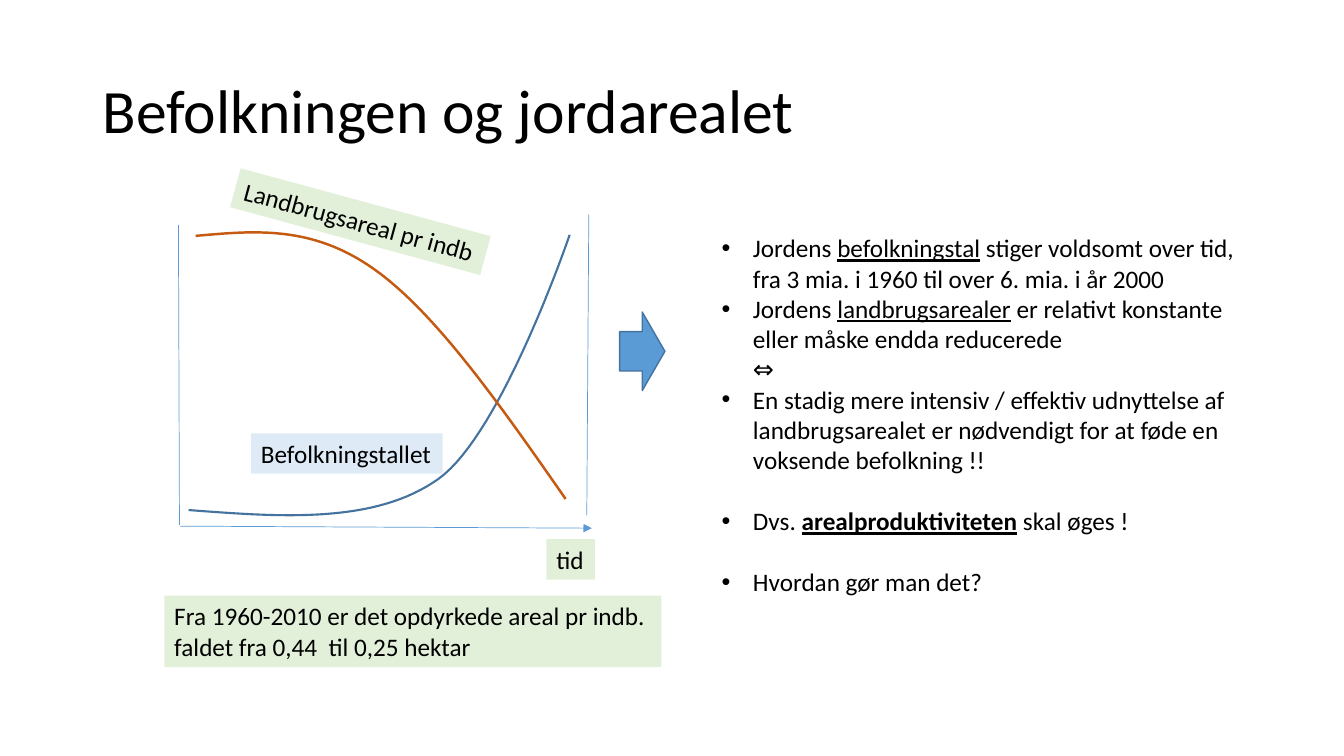
"""Build the slide on population growth and farmland."""
from dataclasses import dataclass
from typing import NamedTuple

from lxml.etree import SubElement
from pptx import Presentation
from pptx.dml.color import RGBColor
from pptx.enum.shapes import MSO_CONNECTOR as Connector, MSO_SHAPE as Preset
from pptx.enum.text import MSO_ANCHOR as Anchor, MSO_AUTO_SIZE as AutoSize
from pptx.oxml.ns import qn
from pptx.slide import Slide
from pptx.util import Inches, Pt

Point = tuple[float, float]


@dataclass(frozen=True)
class Theme:
    font: str = "Calibri"
    title_size: float = 44
    body_size: float = 18
    text: str = "000000"
    blue: str = "5B9BD5"
    dark_blue: str = "43739E"
    orange: str = "C55A11"
    pale_green: str = "E2F0D9"
    pale_blue: str = "DEEBF7"
    white: str = "FFFFFF"
    axis_width: float = 0.5
    arrow_width: float = 1
    bullet_indent: float = 0.31
    bullet_gap: float = 22


THEME = Theme()


class Box(NamedTuple):
    left: float
    top: float
    width: float
    height: float


class Run(NamedTuple):
    text: str
    bold: bool = False
    underline: bool = False


class Item(NamedTuple):
    runs: list[Run]
    gap_after: float = 0


class Label(NamedTuple):
    text: str
    box: Box
    fill: str
    rotation: float = 0


class Curve(NamedTuple):
    points: list[Point]
    color: str
    width: float


class Axis(NamedTuple):
    start: Point
    end: Point
    arrow: bool = False


CURVES = [
    Curve([(1.87, 5.06), (2.79, 5.13), (3.72, 5.2), (4.35, 4.75),
           (4.98, 4.3), (5.65, 2.33), (5.65, 2.33)], THEME.dark_blue, 1.5),
    Curve([(1.94, 2.34), (2.52, 2.29), (3.09, 2.23), (3.71, 2.67),
           (4.32, 3.1), (4.97, 4.03), (5.61, 4.95)], THEME.orange, 1.75),
]
AXES = [
    Axis((1.77, 2.23), (1.78, 5.21)),
    Axis((1.79, 5.22), (5.87, 5.24), arrow=True),
    Axis((5.82, 5.11), (5.84, 2.13)),
]
LABELS = [
    Label("Landbrugsareal pr indb", Box(2.29, 2, 2.57, 0.4), THEME.pale_green, 15.2),
    Label("Befolkningstallet", Box(2.49, 4.3, 1.9, 0.4), THEME.pale_blue),
    Label("tid", Box(5.42, 5.35, 0.48, 0.4), THEME.pale_green),
    Label("Fra 1960-2010 er det opdyrkede areal pr indb.\nfaldet fra 0,44  til 0,25 hektar",
          Box(1.63, 5.91, 4.93, 0.71), THEME.pale_green),
]
ITEMS = [
    Item([Run("Jordens "), Run("befolkningstal", underline=True),
          Run(" stiger voldsomt over tid,\nfra 3 mia. i 1960 til over 6. mia. i år 2000")]),
    Item([Run("Jordens "), Run("landbrugsarealer", underline=True),
          Run(" er relativt konstante\neller måske endda reducerede\n⇔")]),
    Item([Run("En stadig mere intensiv / effektiv udnyttelse af\n"
              "landbrugsarealet er nødvendigt for at føde en\n"
              "voksende befolkning !!")], THEME.bullet_gap),
    Item([Run("Dvs. "), Run("arealproduktiviteten", bold=True, underline=True),
          Run(" skal øges !")], THEME.bullet_gap),
    Item([Run("Hvordan gør man det?")]),
]


def color(value: str) -> RGBColor:
    """Turn a hex value into a colour."""
    return RGBColor.from_string(value)


def write_text(paragraph, text: str, *, size: float = THEME.body_size,
               bold: bool = False, underline: bool = False) -> None:
    """Add formatted text, with a line break at each newline."""
    for index, line in enumerate(text.split("\n")):
        if index:
            paragraph.add_line_break()
        run = paragraph.add_run()
        run.text = line
        font = run.font
        font.name, font.size = THEME.font, Pt(size)
        font.bold, font.underline = bold, underline
        font.color.rgb = color(THEME.text)


def add_text_box(slide: Slide, box: Box, fill: str | None = None, rotation: float = 0,
                 wrap: bool = False):
    """Add an empty text box and return its text frame."""
    shape = slide.shapes.add_textbox(*map(Inches, box))
    shape.rotation = rotation
    if fill:
        shape.fill.solid()
        shape.fill.fore_color.rgb = color(fill)
    frame = shape.text_frame
    frame.word_wrap = wrap
    frame.auto_size = AutoSize.NONE if wrap else AutoSize.SHAPE_TO_FIT_TEXT
    return frame


def add_title(slide: Slide, text: str) -> None:
    """Add the title, centred vertically in its area."""
    frame = add_text_box(slide, Box(0.92, 0.4, 11.5, 1.45), wrap=True)
    frame.vertical_anchor = Anchor.MIDDLE
    frame.paragraphs[0].line_spacing = 0.9
    write_text(frame.paragraphs[0], text, size=THEME.title_size)


def bezier_points(points: list[Point], steps: int = 32) -> list[Point]:
    """Sample a chain of cubic Bézier segments."""
    sampled = [points[0]]
    for first in range(0, len(points) - 1, 3):
        controls = points[first:first + 4]
        for step in range(1, steps + 1):
            t = step / steps
            weights = ((1 - t) ** 3, 3 * t * (1 - t) ** 2, 3 * t * t * (1 - t), t ** 3)
            x, y = (sum(w * c for w, c in zip(weights, axis)) for axis in zip(*controls))
            sampled.append((x, y))
    return sampled


def add_curve(slide: Slide, curve: Curve) -> None:
    """Draw one smooth open curve."""
    start, *others = [(Inches(x), Inches(y)) for x, y in bezier_points(curve.points)]
    builder = slide.shapes.build_freeform(*start)
    builder.add_line_segments(others, close=False)
    shape = builder.convert_to_shape()
    shape.shadow.inherit = False
    shape.fill.background()
    shape.line.color.rgb = color(curve.color)
    shape.line.width = Pt(curve.width)


def add_axis(slide: Slide, axis: Axis) -> None:
    """Draw one axis line, with an arrowhead if asked."""
    line = slide.shapes.add_connector(Connector.STRAIGHT, *map(Inches, axis.start + axis.end))
    line.line.color.rgb = color(THEME.blue)
    line.line.width = Pt(THEME.axis_width)
    if axis.arrow:
        SubElement(line.line._get_or_add_ln(), qn("a:tailEnd"), type="triangle")
    SubElement(line._element.spPr, qn("a:effectLst"))


def add_block_arrow(slide: Slide, box: Box) -> None:
    """Add the block arrow that points to the conclusions."""
    shape = slide.shapes.add_shape(Preset.DOWN_ARROW, *map(Inches, box))
    shape.rotation = 270
    shape.shadow.inherit = False
    shape.fill.solid()
    shape.fill.fore_color.rgb = color(THEME.blue)
    shape.line.color.rgb = color(THEME.dark_blue)
    shape.line.width = Pt(THEME.arrow_width)


def add_bullets(slide: Slide, box: Box, items: list[Item]) -> None:
    """Add the bulleted conclusions."""
    frame = add_text_box(slide, box, THEME.white)
    for index, item in enumerate(items):
        paragraph = frame.add_paragraph() if index else frame.paragraphs[0]
        paragraph.space_after = Pt(item.gap_after)
        properties = paragraph._p.get_or_add_pPr()
        properties.set("marL", str(Inches(THEME.bullet_indent)))
        properties.set("indent", str(-Inches(THEME.bullet_indent)))
        SubElement(properties, qn("a:buFont"), typeface="Arial")
        SubElement(properties, qn("a:buChar"), char="•")
        for run in item.runs:
            write_text(paragraph, run.text, bold=run.bold, underline=run.underline)


def main() -> None:
    """Build and save the presentation."""
    presentation = Presentation()
    presentation.slide_width, presentation.slide_height = Inches(13.33), Inches(7.5)
    slide = presentation.slides.add_slide(presentation.slide_layouts[6])
    add_title(slide, "Befolkningen og jordarealet")
    for curve in CURVES:
        add_curve(slide, curve)
    for label in LABELS:
        frame = add_text_box(slide, label.box, label.fill, label.rotation)
        write_text(frame.paragraphs[0], label.text)
    for axis in AXES:
        add_axis(slide, axis)
    add_block_arrow(slide, Box(5.98, 3.26, 0.78, 0.45))
    add_bullets(slide, Box(7.06, 2.26, 5.34, 3.74), ITEMS)
    presentation.save("out.pptx")


if __name__ == "__main__":
    main()
